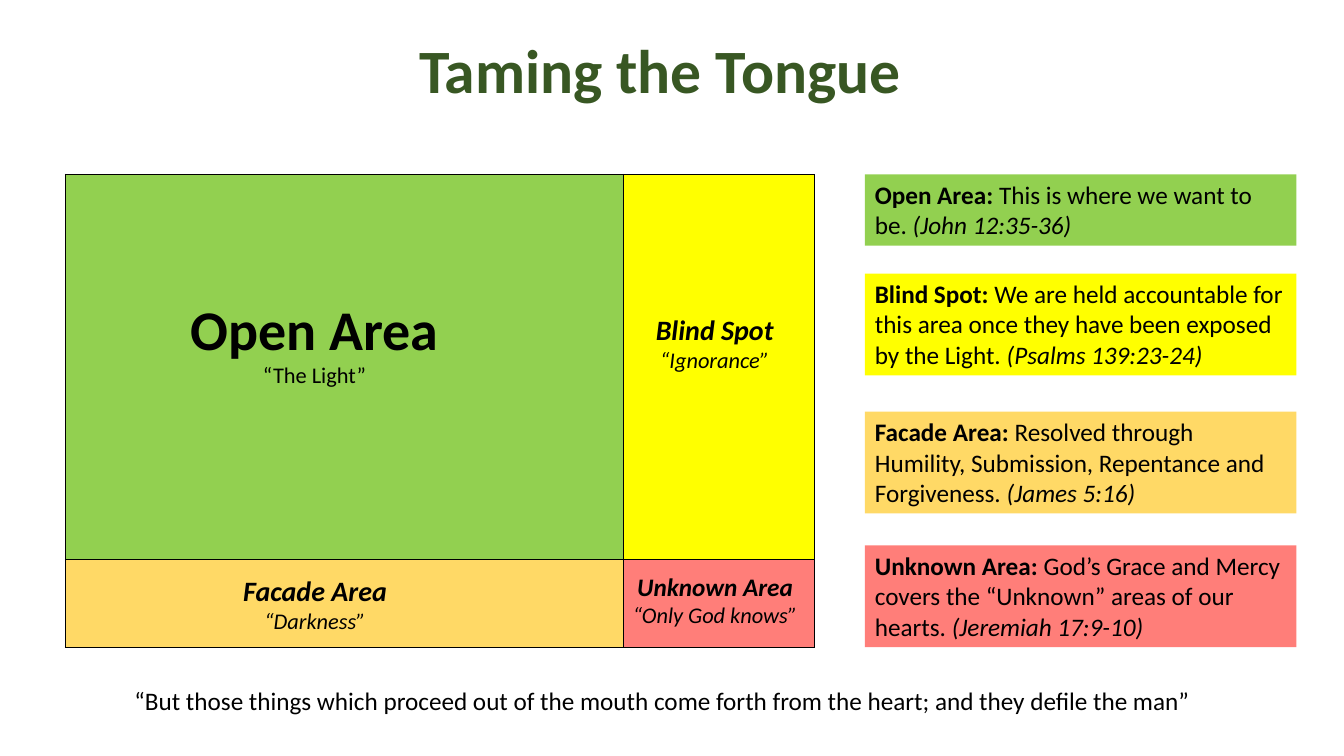
"""Build the Taming the Tongue slide."""
import dataclasses

import lxml.etree
import pptx
import pptx.dml.color
import pptx.enum.shapes
import pptx.enum.text
import pptx.oxml.ns
import pptx.util

Pt = pptx.util.Pt
FONT = "Calibri"
GREEN, YELLOW, GOLD, RED = "92D050", "FFFF00", "FFD966", "FF7E79"
BLACK = "000000"
GRID = (46.8, 124.6, 535, 337.7)
COLS = (398.5, 136.5)
ROWS = (275, 62.7)
FILLS = ((GREEN, YELLOW), (GOLD, RED))
NOTE_X, NOTE_W = 617.8, 308.2


@dataclasses.dataclass
class Label:
    box: tuple[float, float, float, float]
    name: str
    sense: str
    size: float
    slant: bool = True


@dataclasses.dataclass
class Note:
    top: float
    high: float
    fill: str
    name: str
    body: str
    verse: str


LABELS = [
    Label((115.9, 206.6, 217.4, 74.9), "Open Area", "“The Light”", 40, False),
    Label((453.6, 219.6, 113.8, 51.1), "Blind Spot", "“Ignorance”", 20),
    Label((443.5, 404.6, 134.6, 48.2), "Unknown Area", "“Only God knows”", 18),
    Label((162, 406.1, 126, 51.1), "Facade Area", "“Darkness”", 20),
]
NOTES = [
    Note(124.6, 50.9, GREEN, "Open Area: ",
         "This is where we want to be. ", "(John 12:35-36)"),
    Note(195.4, 72.7, YELLOW, "Blind Spot: ",
         "We are held accountable for this area once they have been exposed by the Light. ",
         "(Psalms 139:23-24)"),
    Note(294, 72.7, GOLD, "Facade Area: ",
         "Resolved through Humility, Submission, Repentance and Forgiveness. ",
         "(James 5:16)"),
    Note(389.6, 72.7, RED, "Unknown Area: ",
         "God’s Grace and Mercy covers the “Unknown” areas of our hearts. ",
         "(Jeremiah 17:9-10)"),
]


def hue(code: str) -> pptx.dml.color.RGBColor:
    return pptx.dml.color.RGBColor.from_string(code)


def style(run, size: float, bold: bool = False, slant: bool = False,
          color: str = BLACK) -> None:
    font = run.font
    font.name, font.size = FONT, Pt(size)
    font.bold, font.italic = bold, slant
    font.color.rgb = hue(color)


def add_box(slide, box: tuple[float, float, float, float], text: str):
    frame = slide.shapes.add_textbox(*map(Pt, box)).text_frame
    frame.word_wrap = True
    frame.text = text
    for para in frame.paragraphs:
        para.alignment = pptx.enum.text.PP_ALIGN.CENTER
    return frame


def edge(cell) -> None:
    props = cell._tc.get_or_add_tcPr()
    for spot, side in enumerate(("lnL", "lnR", "lnT", "lnB")):
        line = lxml.etree.Element(pptx.oxml.ns.qn(f"a:{side}"), w=str(Pt(1)))
        fill = lxml.etree.SubElement(line, pptx.oxml.ns.qn("a:solidFill"))
        lxml.etree.SubElement(fill, pptx.oxml.ns.qn("a:srgbClr"), val=BLACK)
        props.insert(spot, line)


def add_grid(slide) -> None:
    table = slide.shapes.add_table(len(ROWS), len(COLS), *map(Pt, GRID)).table
    table.first_row = table.horz_banding = False
    for col, width in zip(table.columns, COLS):
        col.width = Pt(width)
    for row, high, fills in zip(table.rows, ROWS, FILLS):
        row.height = Pt(high)
        for cell, fill in zip(row.cells, fills):
            cell.fill.solid()
            cell.fill.fore_color.rgb = hue(fill)
            edge(cell)


def add_label(slide, label: Label) -> None:
    frame = add_box(slide, label.box, f"{label.name}\n{label.sense}")
    frame.auto_size = pptx.enum.text.MSO_AUTO_SIZE.SHAPE_TO_FIT_TEXT
    name, sense = frame.paragraphs
    style(name.runs[0], label.size, True, label.slant)
    style(sense.runs[0], 16, False, label.slant)


def add_note(slide, note: Note) -> None:
    shape = slide.shapes.add_shape(
        pptx.enum.shapes.MSO_SHAPE.RECTANGLE,
        *map(Pt, (NOTE_X, note.top, NOTE_W, note.high)))
    shape.shadow.inherit = False
    shape.fill.solid()
    shape.fill.fore_color.rgb = hue(note.fill)
    shape.line.fill.background()
    frame = shape.text_frame
    frame.word_wrap = True
    frame.auto_size = pptx.enum.text.MSO_AUTO_SIZE.SHAPE_TO_FIT_TEXT
    frame.vertical_anchor = pptx.enum.text.MSO_ANCHOR.TOP
    para = frame.paragraphs[0]
    para.alignment = pptx.enum.text.PP_ALIGN.LEFT
    parts = ((note.name, True, False), (note.body, False, False),
             (note.verse, False, True))
    for text, bold, slant in parts:
        run = para.add_run()
        run.text = text
        style(run, 18, bold, slant)


def main() -> None:
    deck = pptx.Presentation()
    deck.slide_width, deck.slide_height = Pt(960), Pt(540)
    slide = deck.slides.add_slide(deck.slide_layouts[6])
    add_grid(slide)
    for label in LABELS:
        add_label(slide, label)
    for note in NOTES:
        add_note(slide, note)
    quote = add_box(slide, (77.8, 486, 790.6, 29.1),
                    "“But those things which proceed out of the mouth come forth "
                    "from the heart; and they defile the man”")
    quote.auto_size = pptx.enum.text.MSO_AUTO_SIZE.SHAPE_TO_FIT_TEXT
    style(quote.paragraphs[0].runs[0], 18)
    title = add_box(slide, (57.6, 0, 828, 104.4), "Taming the Tongue")
    title.vertical_anchor = pptx.enum.text.MSO_ANCHOR.MIDDLE
    title.paragraphs[0].line_spacing = 0.9
    style(title.paragraphs[0].runs[0], 44, True, color="385723")
    deck.save("out.pptx")


if __name__ == "__main__":
    main()
